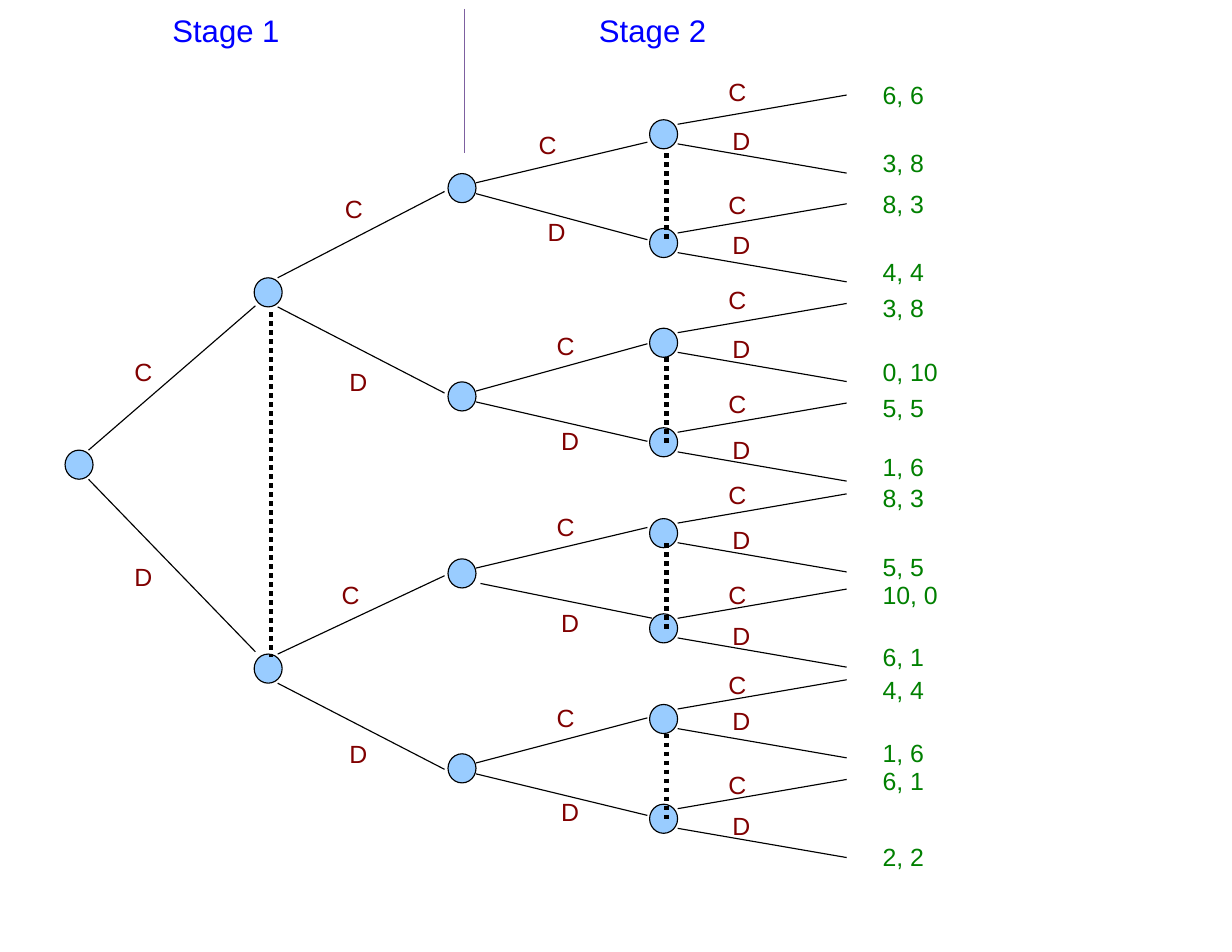
from collections import namedtuple

from lxml import etree
from pptx import Presentation
from pptx.dml.color import RGBColor
from pptx.enum.dml import MSO_LINE
from pptx.enum.shapes import MSO_CONNECTOR, MSO_SHAPE
from pptx.oxml.ns import qn
from pptx.util import Pt

STRAIGHT = MSO_CONNECTOR.STRAIGHT
ELLIPSE = MSO_SHAPE.OVAL
DOTTED = MSO_LINE.ROUND_DOT

BLACK, NODE_BLUE, DIVIDER_PURPLE = "000000", "99CCFF", "7D60A0"
MOVE_RED, PAYOFF_GREEN, STAGE_BLUE = "800000", "008000", "0000FF"
NODE_WIDTH, NODE_HEIGHT = 18, 18.7
LABEL_WIDTH, LABEL_HEIGHT = 28.8, 32.4

Box = namedtuple("Box", "left top width height")
Move = namedtuple("Move", "end label_x label_y nudge", defaults=(0,))
Node = namedtuple("Node", "top cooperate defect")

ROOT = [Node(249.4, Move(156.6, 36, 181.8), Move(379, 36, 313.5))]
FIRST_REPLY = [
    Node(138.6, Move(83.1, 49.7, 77.4), Move(212.7, 52.6, 188.2)),
    Node(380.5, Move(330.1, 47.6, 325), Move(454.6, 52.6, 427.3)),
]
SECOND_OPENING = [
    Node(71.6, Move(51.4, 49.7, 36.3), Move(114.1, 55.4, 91.8)),
    Node(205.5, Move(181, 61.2, 165.2), Move(243.7, 64.1, 226.4)),
    Node(319.3, Move(299.1, 61.2, 281.8), Move(357.4, 64.1, 343, 2.9)),
    Node(444.6, Move(421.5, 61.2, 404.2), Move(484.2, 64.1, 464.7)),
]
REPLY_RISE = 15.9
REPLY_DROP = 34.3
SECOND_REPLY = [
    Node(top, Move(top - REPLY_RISE, 42, c_label), Move(top + REPLY_DROP, 44.6, d_label))
    for top, c_label, d_label in [
        (37, 1.8, 33.4), (106.9, 74.5, 100.4), (171, 135.7, 167.4),
        (235, 202.6, 232.2), (293.4, 261, 289.8), (354.6, 325, 351.7),
        (412.9, 383.4, 406.4), (477, 447.4, 474.1),
    ]
]
PAYOFFS = [
    ("6, 6", 3.9), ("3, 8", 47.8), ("8, 3", 73.8), ("4, 4", 117.7),
    ("3, 8", 140.7), ("0, 10", 181.8), ("5, 5", 204.8), ("1, 6", 243),
    ("8, 3", 263.1), ("5, 5", 307), ("10, 0", 325), ("6, 1", 365.4),
    ("4, 4", 386.2), ("1, 6", 426.6), ("6, 1", 444.6), ("2, 2", 493.5),
]


def rgb(value):
    return RGBColor.from_string(value)


def add_text(slide, text, box, color, size=16, inset=(8.64, 5.04)):
    label = slide.shapes.add_textbox(*(Pt(length) for length in box))
    frame = label.text_frame
    frame.word_wrap = False
    frame.margin_left = frame.margin_right = Pt(inset[0])
    frame.margin_top = frame.margin_bottom = Pt(inset[1])
    paragraph = frame.paragraphs[0]
    paragraph.line_spacing = 1.12
    run = paragraph.add_run()
    run.text = text
    run.font.name = "Arial"
    run.font.size = Pt(size)
    run.font.color.rgb = rgb(color)


def add_line(slide, start, end, color=BLACK, width=0.75, dash=None):
    line = slide.shapes.add_connector(STRAIGHT, *(Pt(length) for length in (*start, *end)))
    line.line.color.rgb = rgb(color)
    line.line.width = Pt(width)
    if dash is not None:
        line.line.dash_style = dash
    etree.SubElement(line._element.spPr, qn("a:effectLst"))


def add_node(slide, left, top):
    node = slide.shapes.add_shape(ELLIPSE, Pt(left), Pt(top), Pt(NODE_WIDTH), Pt(NODE_HEIGHT))
    node.shadow.inherit = False
    node.fill.solid()
    node.fill.fore_color.rgb = rgb(NODE_BLUE)
    node.line.color.rgb = rgb(BLACK)
    node.line.width = Pt(0.75)


def add_decisions(slide, box, nodes, start_x, start_ys):
    for node in nodes:
        add_node(slide, box.left, box.top + node.top)
        for name, move, start_y in zip("CD", (node.cooperate, node.defect), start_ys):
            left = box.left + move.nudge
            add_line(
                slide,
                (left + start_x, box.top + node.top + start_y + move.nudge),
                (left + box.width, box.top + move.end),
            )
            label = Box(box.left + move.label_x, box.top + move.label_y, LABEL_WIDTH, LABEL_HEIGHT)
            add_text(slide, name, label, MOVE_RED)


def add_information_sets(slide, box, tops, length):
    for top in tops:
        start = box.top + top
        add_line(slide, (box.left, start), (box.left, start + length), width=2.89, dash=DOTTED)


def add_payoffs(slide, box):
    for payoff, top in PAYOFFS:
        width = box.width if len(payoff) > 4 else 45
        add_text(slide, payoff, Box(box.left, box.top + top, width, LABEL_HEIGHT), PAYOFF_GREEN)


def add_stages(slide, box):
    for stage, left in (("Stage 1", 0), ("Stage 2", 274.3)):
        heading = Box(box.left + left, box.top, 86, 34.6)
        add_text(slide, stage, heading, STAGE_BLUE, size=20, inset=(7.2, 3.6))
    divider = box.left + 195.1
    add_line(slide, (divider, box.top + 5), (divider, box.top + box.height), DIVIDER_PURPLE)


def add_tree(slide, box):
    def column(left, width):
        return Box(box.left + left, box.top, width, box.height)

    add_decisions(slide, column(0, 122.4), ROOT, 15.1, (0, 18.7))
    add_decisions(slide, column(121.6, 122.4), FIRST_REPLY, 15.1, (0, 18.7))
    add_decisions(slide, column(246.2, 128.2), SECOND_OPENING, 18, (5.9, 12.9))
    add_decisions(slide, column(375.8, 126.7), SECOND_REPLY, 18, (2.9, 15.5))
    add_information_sets(slide, column(132.4, 0), [160.9], 221.7)
    add_information_sets(slide, column(386.6, 0), [58.6, 189.7, 309.2, 431.6], 55.4)
    add_payoffs(slide, column(516.9, 56))


def main():
    presentation = Presentation()
    presentation.slide_width, presentation.slide_height = Pt(792), Pt(612)
    slide = presentation.slides.add_slide(presentation.slide_layouts[6])
    add_tree(slide, Box(41.8, 40, 570, 526))
    add_stages(slide, Box(103.7, 0.7, 357, 98))
    presentation.save("out.pptx")


if __name__ == "__main__":
    main()
